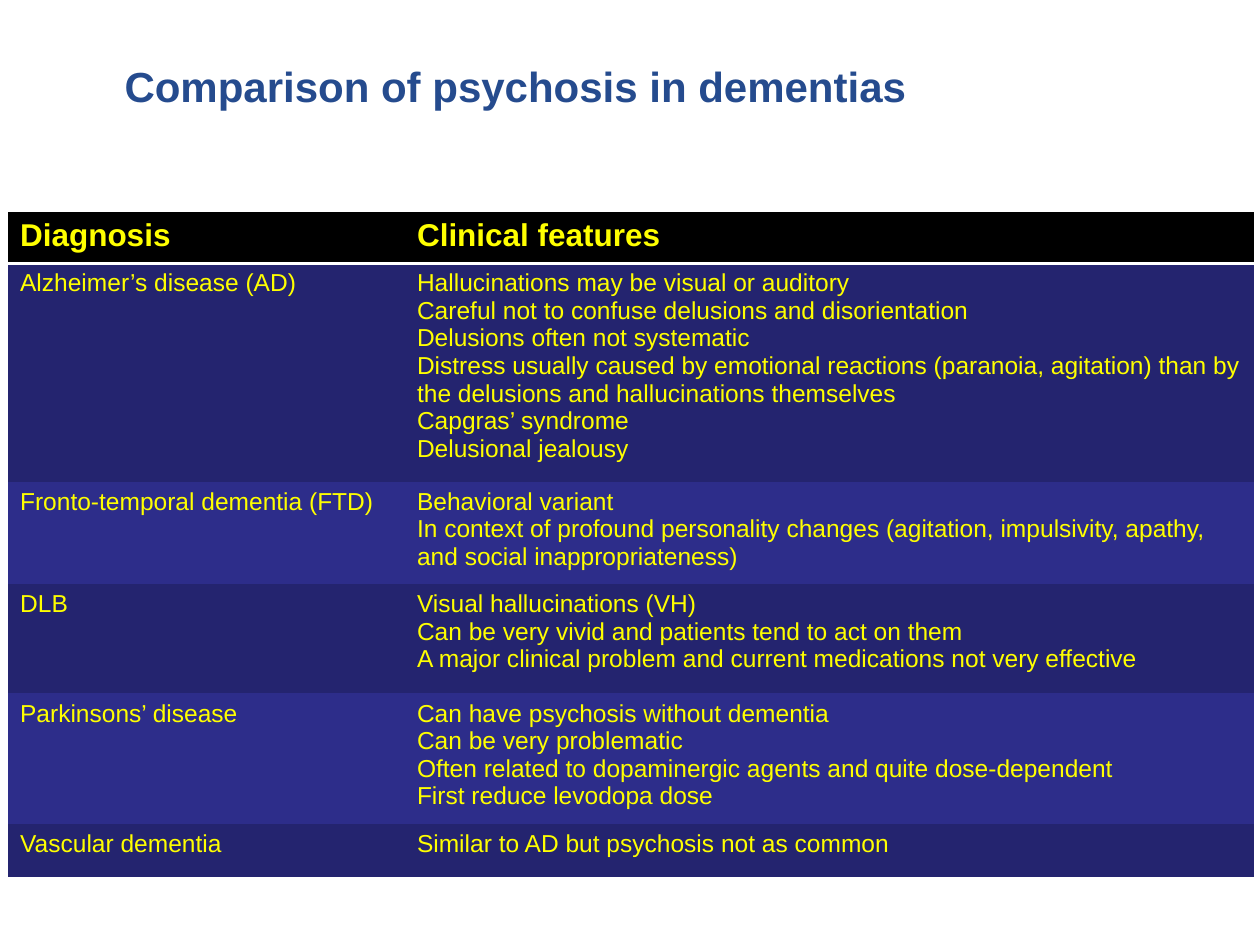
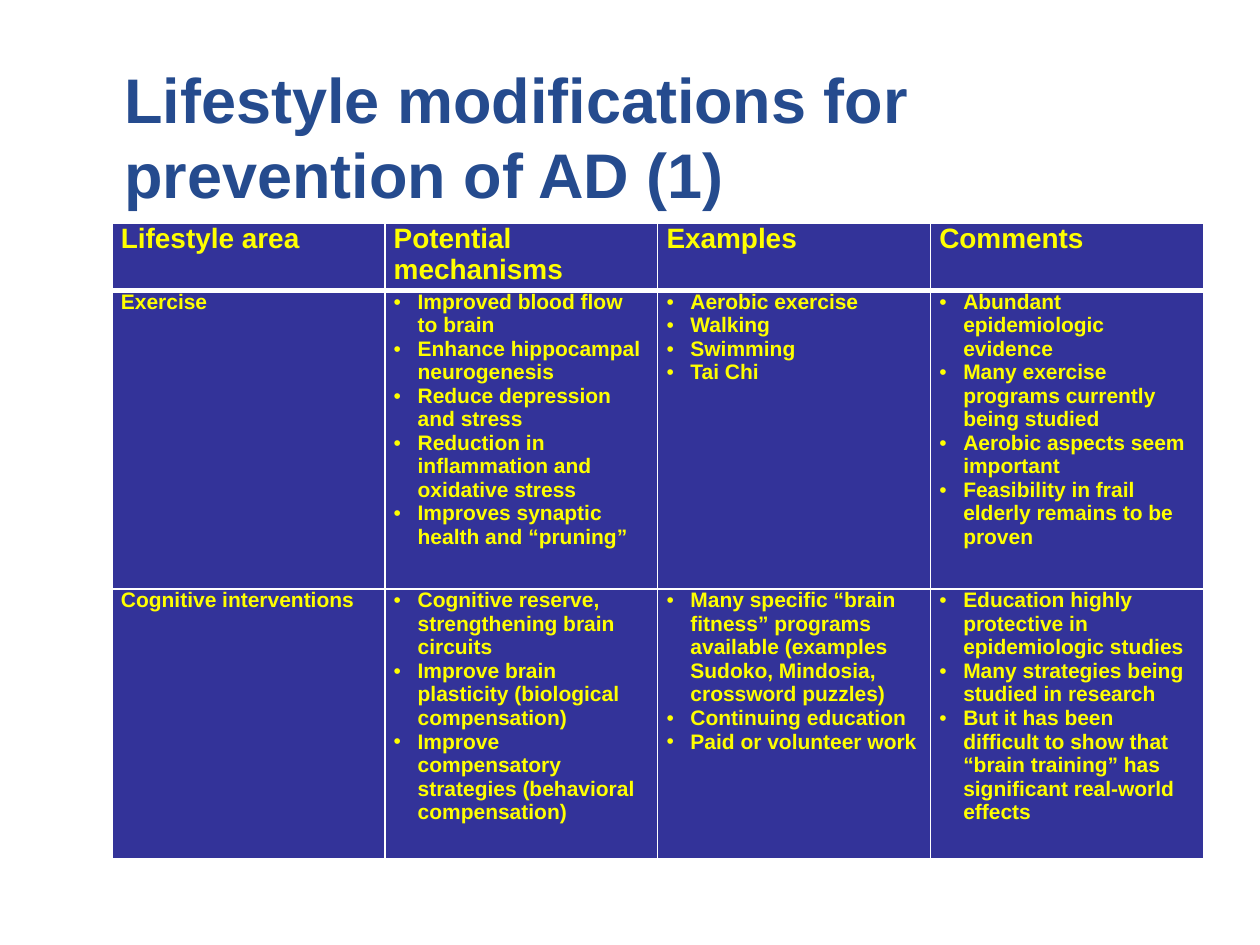
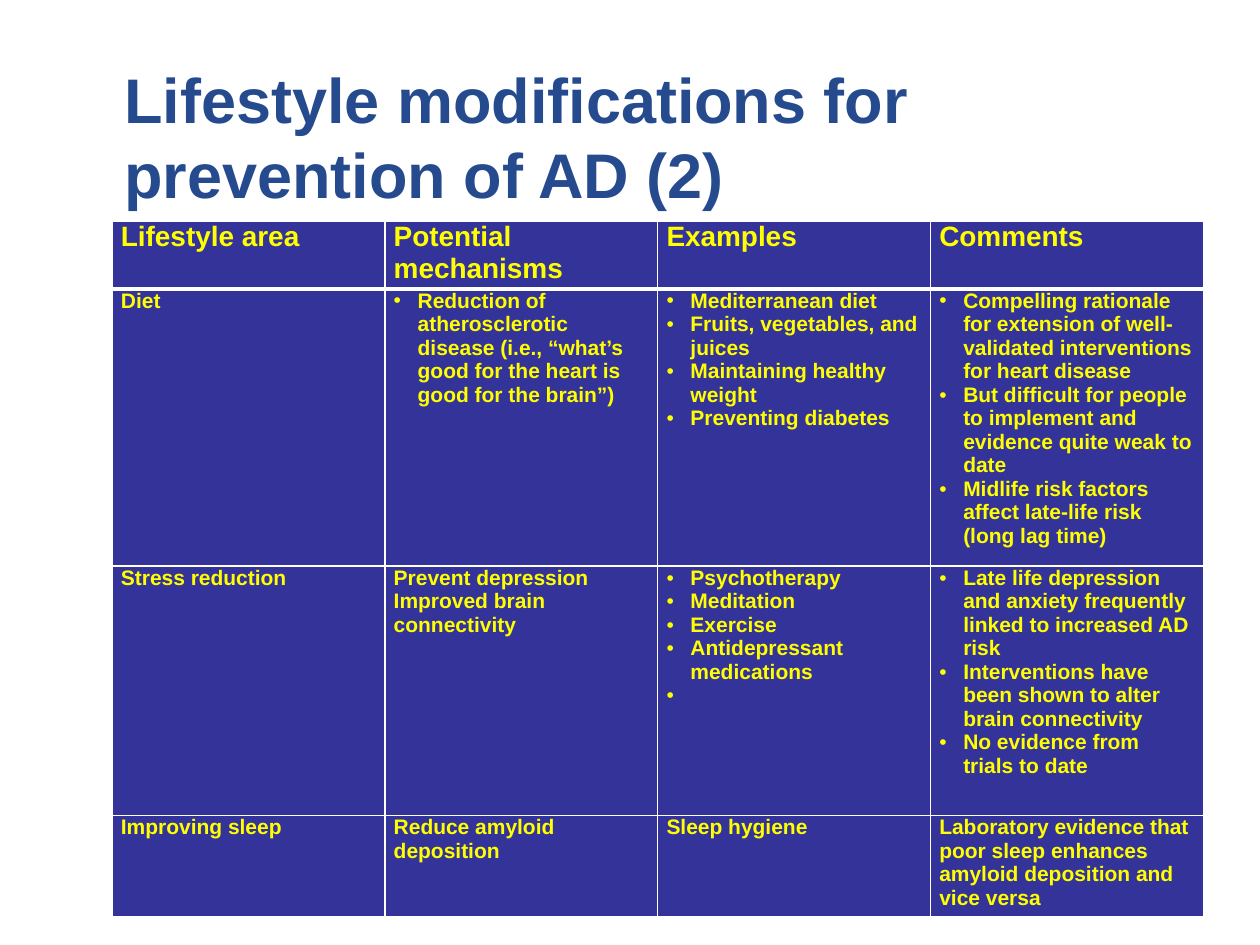
"""Build three slides of tables on psychosis and lifestyle in dementia."""
from lxml.etree import SubElement
from pptx import Presentation
from pptx.dml.color import RGBColor
from pptx.enum.text import MSO_ANCHOR
from pptx.oxml.ns import qn
from pptx.util import Inches, Pt

FONT = "Arial"
COLORS = {
    "title": "254B8E",
    "text": "FFFF00",
    "rule": "FFFFFF",
    "black": "000000",
    "navy": "24246F",
    "indigo": "2D2D8A",
    "blue": "333399",
}
LEFT = 0.89
TITLE_BOX = (LEFT, 0.43, 8.5, 1.25)
INDENT = 0.19
NO_GRID_STYLE = "{2D5ABB26-0587-4C30-8999-92F81FD0307C}"

PSYCHOSIS_LOOK = {
    "insets": (0.1, 0.1, 0.05), "sizes": (18, 14), "bold_body": False,
    "header_fill": "black", "body_fills": ("navy", "indigo"),
    "grid_rule": 0, "header_rule": 2,
}
LIFESTYLE_LOOK = {
    "insets": (0.07, 0.08, 0), "sizes": (16, 12), "bold_body": True,
    "header_fill": "blue", "body_fills": ("blue",),
    "grid_rule": 1, "header_rule": 3,
}
LIFESTYLE_HEADER = ("Lifestyle area", "Potential mechanisms", "Examples", "Comments")
LIFESTYLE_COLUMNS = (8.66 / 4,) * 4

PSYCHOSIS_ROWS = [
    ("Diagnosis", "Clinical features"),
    ("Alzheimer’s disease (AD)",
     "Hallucinations may be visual or auditory\n"
     "Careful not to confuse delusions and disorientation\n"
     "Delusions often not systematic\n"
     "Distress usually caused by emotional reactions (paranoia, agitation) than by "
     "the delusions and hallucinations themselves\n"
     "Capgras’ syndrome\n"
     "Delusional jealousy"),
    ("Fronto-temporal dementia (FTD)",
     "Behavioral variant\n"
     "In context of profound personality changes (agitation, impulsivity, apathy, "
     "and social inappropriateness)"),
    ("DLB",
     "Visual hallucinations (VH)\n"
     "Can be very vivid and patients tend to act on them\n"
     "A major clinical problem and current medications not very effective"),
    ("Parkinsons’ disease",
     "Can have psychosis without dementia\n"
     "Can be very problematic\n"
     "Often related to dopaminergic agents and quite dose-dependent\n"
     "First reduce levodopa dose"),
    ("Vascular dementia", "Similar to AD but psychosis not as common"),
]
ACTIVITY_ROWS = [
    LIFESTYLE_HEADER,
    ("Exercise",
     ["Improved blood flow to brain", "Enhance hippocampal neurogenesis",
      "Reduce depression and stress", "Reduction in inflammation and oxidative stress",
      "Improves synaptic health and “pruning”"],
     ["Aerobic exercise", "Walking", "Swimming", "Tai Chi"],
     ["Abundant epidemiologic evidence",
      "Many exercise programs currently being studied",
      "Aerobic aspects seem important",
      "Feasibility in frail elderly remains to be proven"]),
    ("Cognitive interventions",
     ["Cognitive reserve, strengthening brain circuits",
      "Improve brain plasticity (biological compensation)",
      "Improve compensatory strategies (behavioral compensation)"],
     ["Many specific “brain fitness” programs available "
      "(examples Sudoko, Mindosia, crossword puzzles)",
      "Continuing education", "Paid or volunteer work"],
     ["Education highly protective in epidemiologic studies",
      "Many strategies being studied in research",
      "But it has been difficult to show that “brain training” has significant "
      "real-world effects"]),
]
WELLBEING_ROWS = [
    LIFESTYLE_HEADER,
    ("Diet",
     ["Reduction of atherosclerotic disease (i.e., “what’s good for the heart is "
      "good for the brain”)"],
     ["Mediterranean diet", "Fruits, vegetables, and juices",
      "Maintaining healthy weight", "Preventing diabetes"],
     ["Compelling rationale for extension of well-validated interventions for "
      "heart disease",
      "But difficult for people to implement and evidence quite weak to date",
      "Midlife risk factors affect late-life risk (long lag time)"]),
    ("Stress reduction",
     "Prevent depression\nImproved brain connectivity",
     ["Psychotherapy", "Meditation", "Exercise", "Antidepressant medications", " "],
     ["Late life depression and anxiety frequently linked to increased AD risk",
      "Interventions have been shown to alter brain connectivity",
      "No evidence from trials to date"]),
    ("Improving sleep", "Reduce amyloid deposition", "Sleep hygiene",
     "Laboratory evidence that poor sleep enhances amyloid deposition and vice versa"),
]
SLIDES = [
    {"title": "Comparison of psychosis in dementias", "title_size": 24,
     "rows": PSYCHOSIS_ROWS, "look": PSYCHOSIS_LOOK, "corner": (0.06, 1.68),
     "columns": (3.15, 6.74), "heights": (0.41, 1.73, 0.81, 0.87, 1.03, 0.42)},
    {"title": "Lifestyle modifications for prevention of AD (1)", "title_size": 36,
     "rows": ACTIVITY_ROWS, "look": LIFESTYLE_LOOK, "corner": (LEFT, 1.77),
     "columns": LIFESTYLE_COLUMNS, "heights": (0.53, 2.37, 2.14)},
    {"title": "Lifestyle modifications for prevention of AD (2)", "title_size": 36,
     "rows": WELLBEING_ROWS, "look": LIFESTYLE_LOOK, "corner": (LEFT, 1.76),
     "columns": LIFESTYLE_COLUMNS, "heights": (0.53, 2.05, 1.98, 0.79)},
]


def style(paragraph, size, color, bold):
    for run in paragraph.runs:
        run.font.name = FONT
        run.font.size = Pt(size)
        run.font.bold = bold
        run.font.color.rgb = RGBColor.from_string(COLORS[color])


def add_title(slide, title, size):
    box = slide.shapes.add_textbox(*map(Inches, TITLE_BOX))
    frame = box.text_frame
    frame.word_wrap = True
    frame.vertical_anchor = MSO_ANCHOR.TOP
    frame.text = title
    style(frame.paragraphs[0], size, "title", True)


def add_bullet(paragraph):
    properties = paragraph._p.get_or_add_pPr()
    properties.set("marL", str(Inches(INDENT)))
    properties.set("indent", str(-Inches(INDENT)))
    SubElement(properties, qn("a:buFont"), typeface=FONT)
    SubElement(properties, qn("a:buChar"), char="•")


def rule_cell(cell, row, look):
    grid, header = look["grid_rule"], look["header_rule"]
    widths = {"L": grid, "R": grid,
              "T": header if row == 1 else grid,
              "B": header if row == 0 else grid}
    for side, width in widths.items():
        line = SubElement(cell._tc.get_or_add_tcPr(), qn(f"a:ln{side}"),
                          w=str(Pt(width)))
        if width:
            fill = SubElement(line, qn("a:solidFill"))
            SubElement(fill, qn("a:srgbClr"), val=COLORS["rule"])
        else:
            SubElement(line, qn("a:noFill"))


def fill_cell(cell, content, row, look):
    rule_cell(cell, row, look)
    fills = look["body_fills"]
    fill = fills[(row - 1) % len(fills)] if row else look["header_fill"]
    cell.fill.solid()
    cell.fill.fore_color.rgb = RGBColor.from_string(COLORS[fill])
    cell.margin_left, cell.margin_right, end = map(Inches, look["insets"])
    cell.margin_top = cell.margin_bottom = end
    bulleted = isinstance(content, list)
    cell.text_frame.text = "\n".join(content) if bulleted else content
    for paragraph in cell.text_frame.paragraphs:
        if bulleted:
            add_bullet(paragraph)
        style(paragraph, look["sizes"][min(row, 1)], "text",
              row == 0 or look["bold_body"])


def add_grid(slide, rows, look, corner, columns, heights):
    extent = (*corner, sum(columns), sum(heights))
    table = slide.shapes.add_table(len(rows), len(columns), *map(Inches, extent)).table
    table._tbl.tblPr.find(qn("a:tableStyleId")).text = NO_GRID_STYLE
    for column, width in zip(table.columns, columns):
        column.width = Inches(width)
    for index, (height, contents) in enumerate(zip(heights, rows)):
        table.rows[index].height = Inches(height)
        for cell, content in zip(table.rows[index].cells, contents):
            fill_cell(cell, content, index, look)


def main():
    deck = Presentation()
    deck.slide_width, deck.slide_height = Inches(10), Inches(7.5)
    for page in SLIDES:
        slide = deck.slides.add_slide(deck.slide_layouts[6])
        add_title(slide, page["title"], page["title_size"])
        add_grid(slide, page["rows"], page["look"], page["corner"],
                 page["columns"], page["heights"])
    deck.save("out.pptx")


if __name__ == "__main__":
    main()
